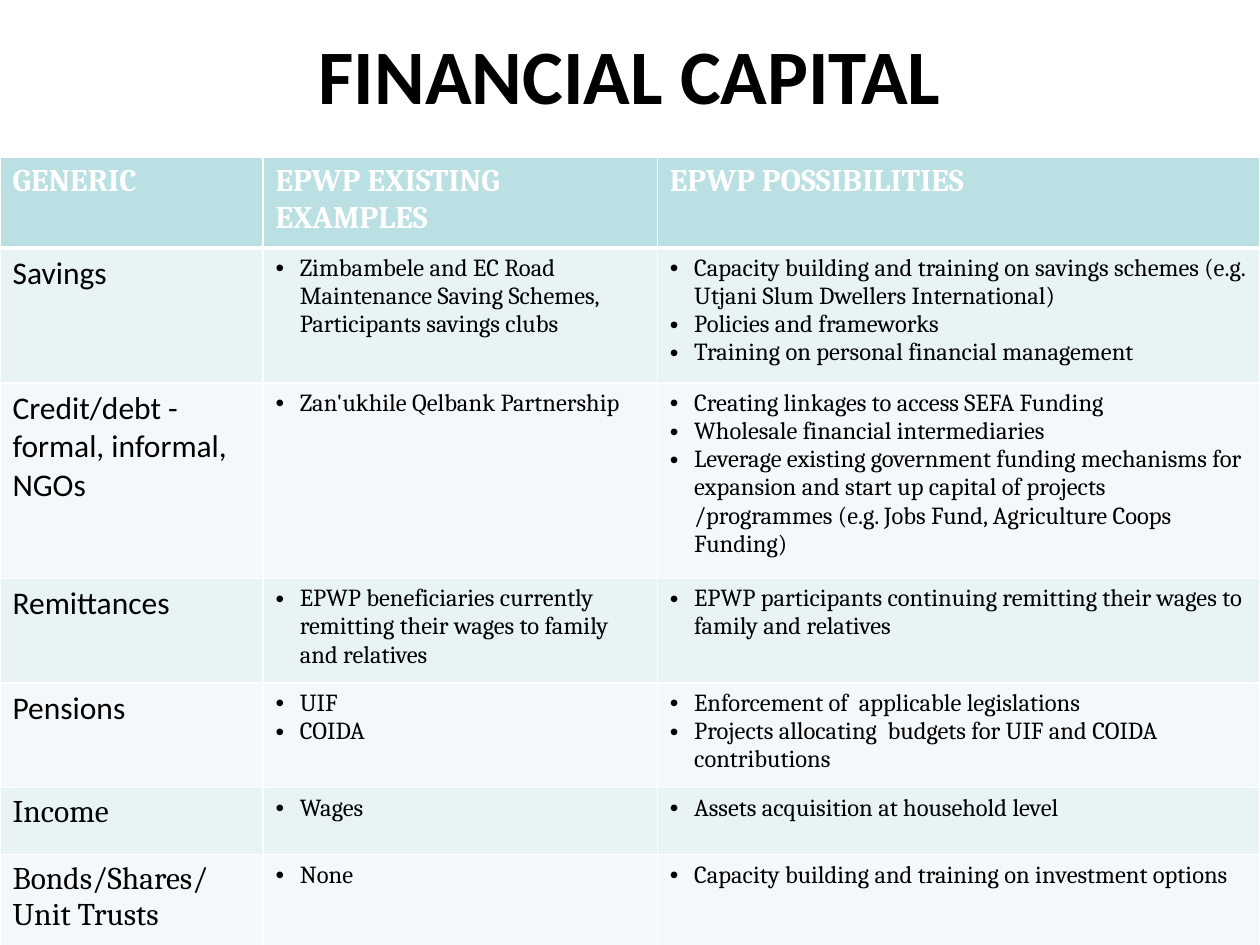
"""Build the FINANCIAL CAPITAL slide: a title above a three-column table."""
import lxml.etree
import pptx
import pptx.dml.color
import pptx.enum.text
import pptx.oxml.ns
import pptx.util
from pptx.util import Cm

COLORS = {
    "text": "000000",
    "white": "FFFFFF",
    "header": "BBE0E3",
    "odd": "E7F3F4",
    "even": "F3F9FA",
}
TITLE = "FINANCIAL CAPITAL"
HEADERS = ["GENERIC", "EPWP EXISTING EXAMPLES", "EPWP POSSIBILITIES"]
ROWS = [
    ("Savings", "Calibri",
     ["Zimbambele and EC Road Maintenance Saving Schemes, Participants savings clubs"],
     ["Capacity building and training on savings schemes (e.g. Utjani Slum Dwellers International)",
      "Policies and frameworks",
      "Training on personal financial management"]),
    ("Credit/debt - formal, informal, NGOs", "Calibri",
     ["Zan'ukhile Qelbank Partnership"],
     ["Creating linkages to access SEFA Funding",
      "Wholesale financial intermediaries",
      "Leverage existing government funding mechanisms for expansion and start up capital "
      "of projects /programmes (e.g. Jobs Fund, Agriculture Coops Funding)"]),
    ("Remittances", "Calibri",
     ["EPWP beneficiaries currently remitting their wages to family and relatives"],
     ["EPWP participants continuing remitting their wages to family and relatives"]),
    ("Pensions", "Calibri",
     ["UIF", "COIDA"],
     ["Enforcement of  applicable legislations",
      "Projects allocating  budgets for UIF and COIDA contributions"]),
    ("Income", "Cambria", ["Wages"], ["Assets acquisition at household level"]),
    ("Bonds/Shares/ Unit Trusts", "Cambria",
     ["None"], ["Capacity building and training on investment options"]),
]
COLUMN_WIDTHS = [5.3, 7.95, 12.15]
ROW_HEIGHTS = [1.83, 2.72, 3.94, 2.11, 2.11, 1.35, 1.83]
BULLET_INDENT = Cm(0.49)


def rgb(name):
    return pptx.dml.color.RGBColor.from_string(COLORS[name])


def add_run(paragraph, text, size, font_name, color="text", bold=False):
    run = paragraph.add_run()
    run.text = text
    run.font.size = pptx.util.Pt(size)
    run.font.name = font_name
    run.font.bold = bold
    run.font.color.rgb = rgb(color)


def add_child(parent, tag, **attributes):
    return lxml.etree.SubElement(parent, pptx.oxml.ns.qn(tag), **attributes)


def add_bullet(paragraph):
    properties = paragraph._p.get_or_add_pPr()
    properties.set("marL", str(BULLET_INDENT))
    properties.set("indent", str(-BULLET_INDENT))
    add_child(properties, "a:buFont", typeface="Arial")
    add_child(properties, "a:buChar", char="•")


def style_cell(cell, fill, top, bottom):
    properties = cell._tc.get_or_add_tcPr()
    for side, points in (("L", 1), ("R", 1), ("T", top), ("B", bottom)):
        line = add_child(properties, f"a:ln{side}", w=str(pptx.util.Pt(points)))
        add_child(add_child(line, "a:solidFill"), "a:srgbClr", val=COLORS["white"])
    cell.fill.solid()
    cell.fill.fore_color.rgb = rgb(fill)


def add_title(slide):
    shape = slide.shapes.add_textbox(Cm(1.9), Cm(0), Cm(21.6), Cm(2.97))
    frame = shape.text_frame
    frame.word_wrap = True
    frame.vertical_anchor = pptx.enum.text.MSO_ANCHOR.MIDDLE
    paragraph = frame.paragraphs[0]
    paragraph.alignment = pptx.enum.text.PP_ALIGN.CENTER
    add_run(paragraph, TITLE, 44, "Calibri", bold=True)


def add_capital_table(slide):
    table = slide.shapes.add_table(
        len(ROW_HEIGHTS), len(COLUMN_WIDTHS), Cm(0), Cm(3.17),
        Cm(sum(COLUMN_WIDTHS)), Cm(sum(ROW_HEIGHTS))).table
    for column, width in zip(table.columns, COLUMN_WIDTHS):
        column.width = Cm(width)
    for row, height in zip(table.rows, ROW_HEIGHTS):
        row.height = Cm(height)

    for column_index, header in enumerate(HEADERS):
        cell = table.cell(0, column_index)
        style_cell(cell, "header", 1, 3)
        add_run(cell.text_frame.paragraphs[0], header, 18, "Cambria", "white", True)

    for row_index, (label, label_font, *bullet_lists) in enumerate(ROWS, 1):
        cells = table.rows[row_index].cells
        for cell in cells:
            style_cell(cell, "odd" if row_index % 2 else "even", 3 if row_index == 1 else 1, 1)
        add_run(cells[0].text_frame.paragraphs[0], label, 18, label_font)
        for column_index, bullets in enumerate(bullet_lists, 1):
            frame = table.cell(row_index, column_index).text_frame
            for position, text in enumerate(bullets):
                paragraph = frame.add_paragraph() if position else frame.paragraphs[0]
                add_bullet(paragraph)
                add_run(paragraph, text, 14, "Cambria")


def main():
    presentation = pptx.Presentation()
    presentation.slide_width = Cm(25.4)
    presentation.slide_height = Cm(19.05)
    slide = presentation.slides.add_slide(presentation.slide_layouts[6])
    add_title(slide)
    add_capital_table(slide)
    presentation.save("out.pptx")


if __name__ == "__main__":
    main()
